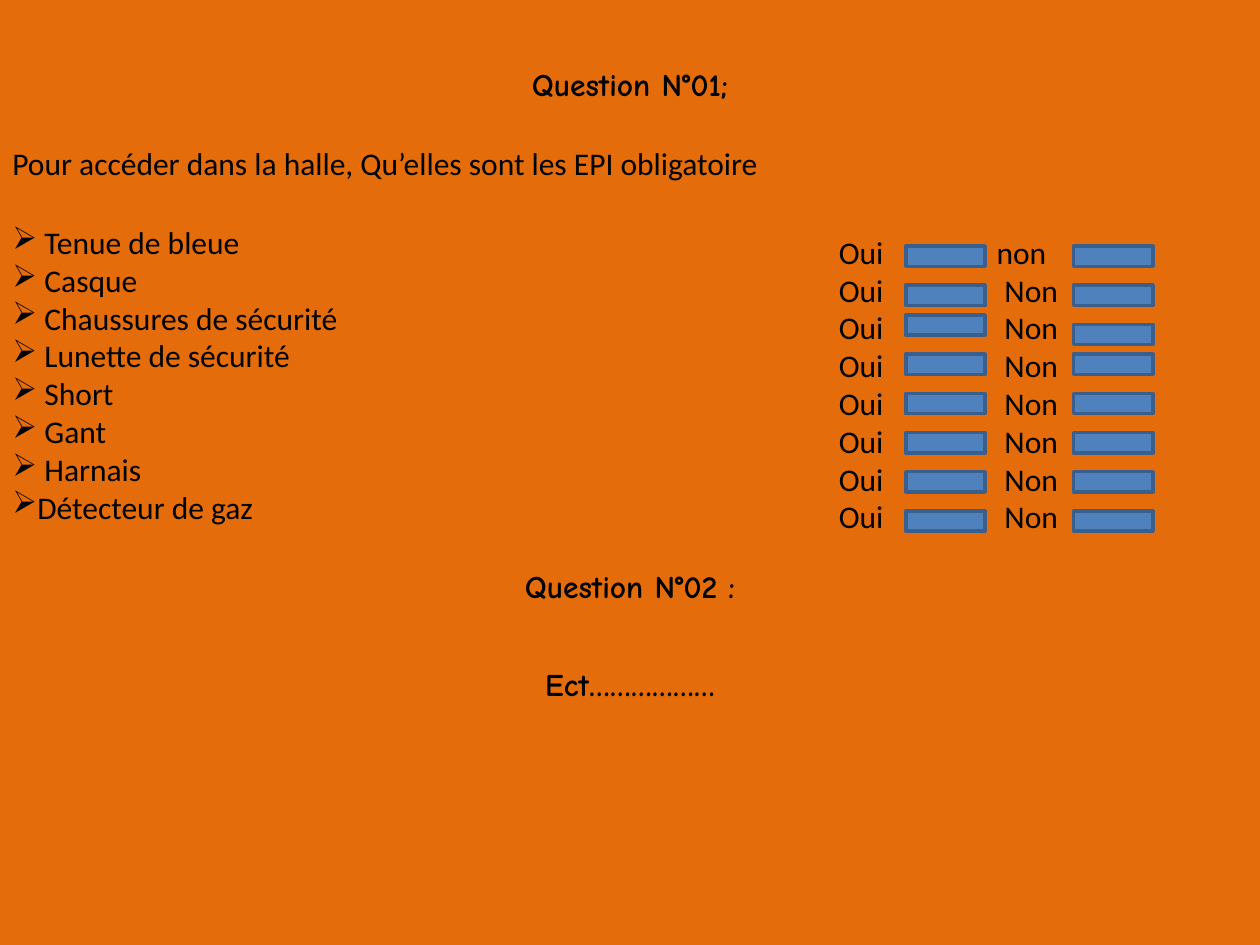
from dataclasses import dataclass

from lxml import etree
from pptx import Presentation
from pptx.dml.color import RGBColor
from pptx.enum.shapes import MSO_SHAPE
from pptx.enum.text import MSO_AUTO_SIZE, PP_ALIGN
from pptx.oxml.ns import qn
from pptx.util import Cm, Pt

RECTANGLE = MSO_SHAPE.RECTANGLE
GROW = MSO_AUTO_SIZE.SHAPE_TO_FIT_TEXT
LEFT, CENTER = PP_ALIGN.LEFT, PP_ALIGN.CENTER


@dataclass(frozen=True)
class Theme:
    background: RGBColor = RGBColor(0xE4, 0x6C, 0x0A)
    text: RGBColor = RGBColor(0, 0, 0)
    box_fill: RGBColor = RGBColor(0x4F, 0x81, 0xBD)
    box_line: RGBColor = RGBColor(0x3A, 0x5F, 0x8C)
    line_width: Pt = Pt(2)
    size: Pt = Pt(18)
    body_font: str = "Calibri"
    title_font: str = "Comic Neue"


THEME = Theme()
BODY = {"name": THEME.body_font, "size": THEME.size, "bold": False}
TITLE = {"name": THEME.title_font, "size": THEME.size, "bold": True}

SLIDE_WIDTH, SLIDE_HEIGHT = 25.4, 19.05
LINE_HEIGHT = 1.02
EQUIPMENT = [
    " Tenue de bleue", " Casque", " Chaussures de sécurité",
    " Lunette de sécurité", " Short", " Gant", " Harnais",
    "Détecteur de gaz",
]

# Answer boxes: an upper and a lower series, both with the same step
BOX_WIDTH, BOX_HEIGHT, BOX_STEP = 1.6, 0.41, 0.79
UPPER_TOP, LOWER_TOP = 4.96, 6.35
# Left edge of each column and the number of boxes in its upper series
BOX_COLUMNS = [(18.26, 2), (21.64, 3)]


def add_text(shapes, lines, left, top, width, height, font=BODY, align=LEFT):
    shape = shapes.add_textbox(Cm(left), Cm(top), Cm(width), Cm(height))
    frame = shape.text_frame
    frame.word_wrap = True
    frame.auto_size = GROW
    for index, line in enumerate(lines):
        paragraph = frame.paragraphs[0] if index == 0 else frame.add_paragraph()
        paragraph.alignment = align
        run = paragraph.add_run()
        run.text = line
        for name, value in font.items():
            setattr(run.font, name, value)
        run.font.color.rgb = THEME.text
    return frame.paragraphs


def add_line(slide, text, top, font=BODY, align=LEFT):
    add_text(slide.shapes, [text], 0, top, SLIDE_WIDTH, LINE_HEIGHT, font, align)


def add_bullet(paragraph, character):
    bullet = etree.SubElement(paragraph._p.get_or_add_pPr(), qn("a:buChar"))
    bullet.set("char", character)


def add_tab_stop(paragraph, position):
    properties = paragraph._p.get_or_add_pPr()
    stops = etree.SubElement(properties, qn("a:tabLst"))
    stop = etree.SubElement(stops, qn("a:tab"))
    stop.set("pos", str(Cm(position)))
    stop.set("algn", "l")


def add_answer_box(shapes, left, top):
    shape = shapes.add_shape(
        RECTANGLE, Cm(left), Cm(top), Cm(BOX_WIDTH), Cm(BOX_HEIGHT))
    shape.shadow.inherit = False
    shape.fill.solid()
    shape.fill.fore_color.rgb = THEME.box_fill
    shape.line.color.rgb = THEME.box_line
    shape.line.width = THEME.line_width


def add_answers(slide):
    shapes = slide.shapes.add_group_shape().shapes
    count = len(EQUIPMENT)

    # Labels, with a tab between the two choices
    labels = ["Oui\tnon"] + ["Oui\tNon"] * (count - 1)
    paragraphs = add_text(shapes, labels, 16.66, 4.57, 8.13, 7.19)
    for index, paragraph in enumerate(paragraphs):
        add_tab_stop(paragraph, 3.18 if index == 0 else 3.34)

    # Boxes to tick
    for left, upper_count in BOX_COLUMNS:
        for row in range(count):
            if row < upper_count:
                top = UPPER_TOP + row * BOX_STEP
            else:
                top = LOWER_TOP + (row - 2) * BOX_STEP
            add_answer_box(shapes, left, top)


def main():
    presentation = Presentation()
    presentation.slide_width = Cm(SLIDE_WIDTH)
    presentation.slide_height = Cm(SLIDE_HEIGHT)
    slide = presentation.slides.add_slide(presentation.slide_layouts[6])
    slide.background.fill.solid()
    slide.background.fill.fore_color.rgb = THEME.background

    # First question
    add_line(slide, "Question N°01;", 1.19, TITLE, CENTER)
    add_line(slide, "Pour accéder dans la halle, Qu’elles sont les EPI obligatoire", 2.77)
    for paragraph in add_text(slide.shapes, EQUIPMENT, 0, 4.37, 8.13, 6.4):
        add_bullet(paragraph, "➢")
    add_answers(slide)

    # Following questions
    add_line(slide, "Question N°02 :", 11.3, TITLE, CENTER)
    add_line(slide, "Ect………………", 13.28, TITLE, CENTER)

    presentation.save("out.pptx")


if __name__ == "__main__":
    main()
